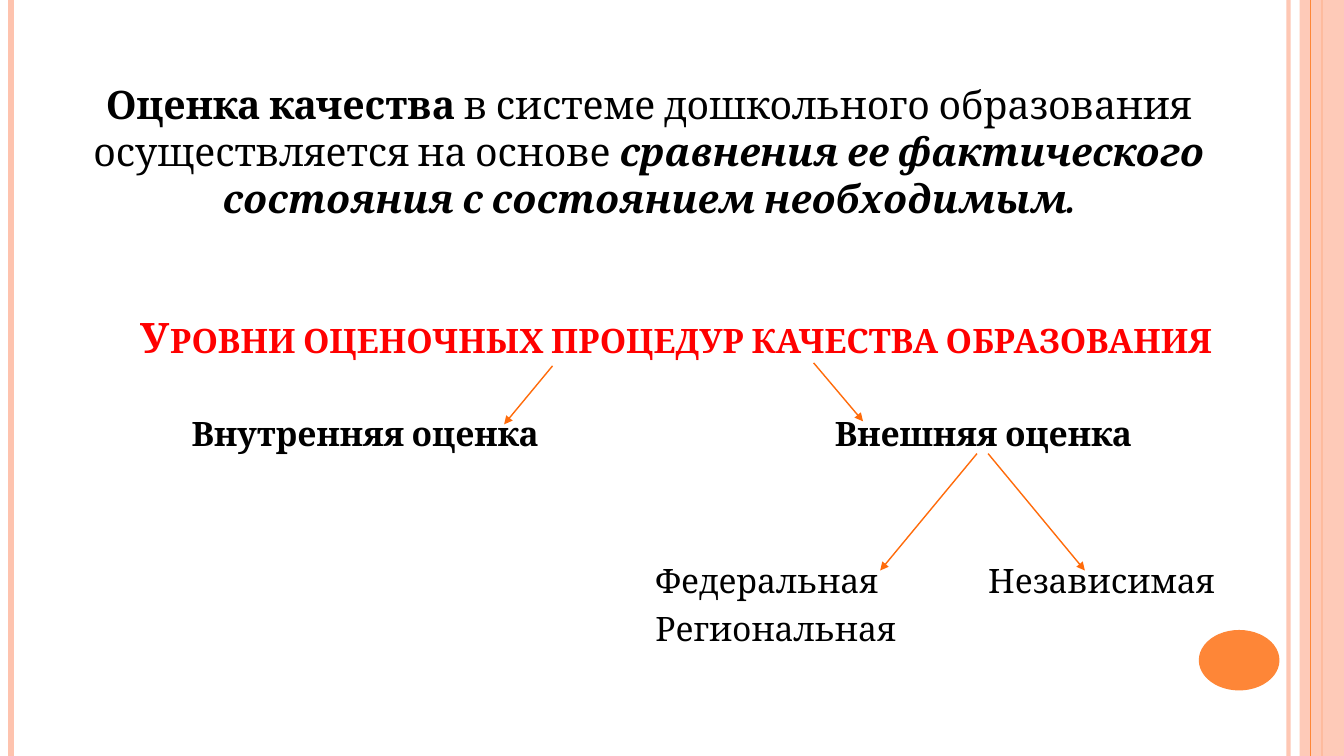
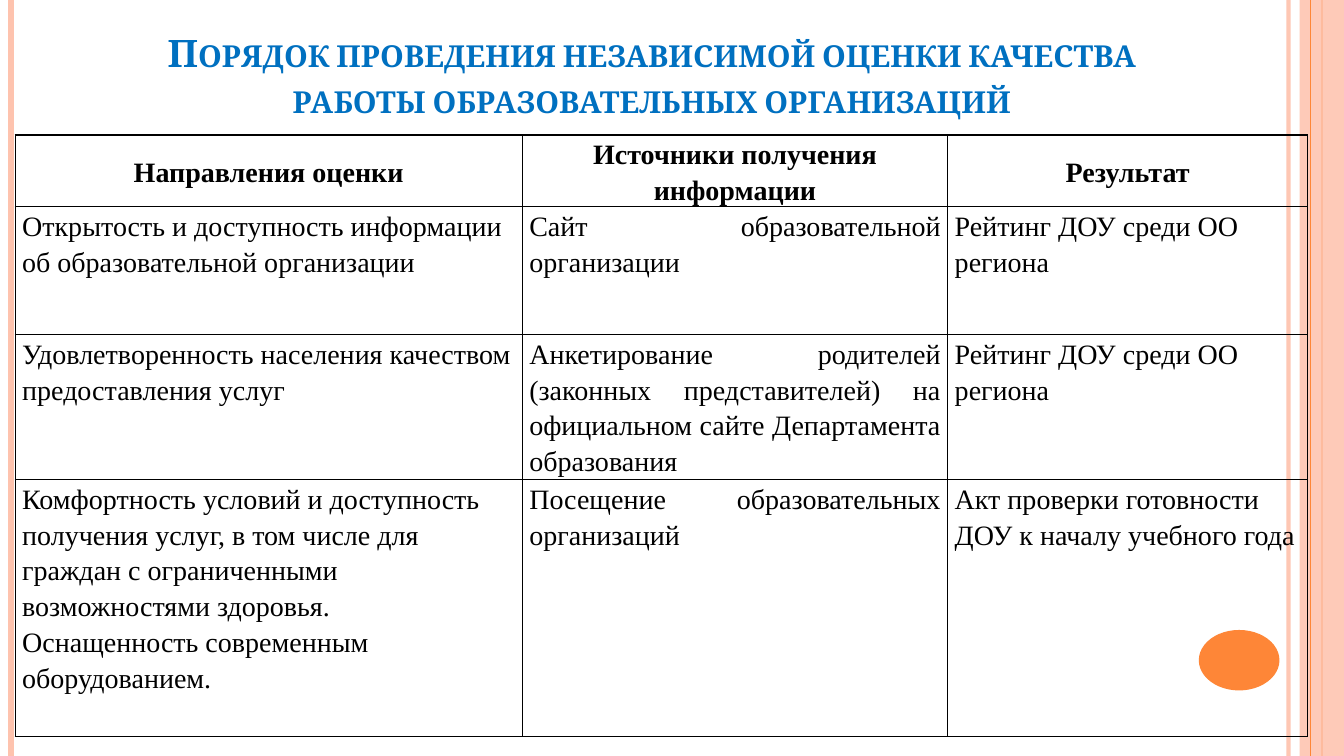
from dataclasses import dataclass
from typing import NamedTuple

from lxml.etree import SubElement
from pptx import Presentation
from pptx.dml.color import RGBColor
from pptx.enum.shapes import MSO_CONNECTOR, MSO_SHAPE
from pptx.enum.text import MSO_ANCHOR, MSO_AUTO_SIZE, PP_ALIGN
from pptx.oxml.ns import qn
from pptx.util import Inches, Pt


@dataclass(frozen=True)
class Theme:
    heading_font: str = "Cambria"
    table_font: str = "Times New Roman"
    black: RGBColor = RGBColor(0x00, 0x00, 0x00)
    red: RGBColor = RGBColor(0xFF, 0x00, 0x00)
    blue: RGBColor = RGBColor(0x00, 0x70, 0xC0)
    peach: RGBColor = RGBColor(0xFE, 0xC3, 0xAE)
    orange: RGBColor = RGBColor(0xFE, 0x86, 0x37)
    arrow: RGBColor = RGBColor(0xFF, 0x6B, 0x0A)
    levels_title_size: int = 30
    procedure_title_size: int = 27
    statement_size: int = 28
    body_size: int = 24
    table_size: int = 20


THEME = Theme()
SLIDE_WIDTH, SLIDE_HEIGHT = 13.33, 7.5


class Box(NamedTuple):
    left: float
    top: float
    width: float
    height: float

    def lengths(self) -> list:
        return [Inches(value) for value in self]


class Stripe(NamedTuple):
    x: float
    color: RGBColor
    weight: float
    opacity: int = 100


class Arrow(NamedTuple):
    x1: float
    y1: float
    x2: float
    y2: float


class Level(NamedTuple):
    placeholder: int
    entries: tuple
    box: Box
    bold: bool = False


class Phrase(NamedTuple):
    text: str
    bold: bool = False
    italic: bool = False


class Column(NamedTuple):
    heading: str
    width: float
    align: PP_ALIGN
    entries: tuple


STRIPES_BEHIND = (
    Stripe(12.78, THEME.peach, 3, 93),
    Stripe(0.11, THEME.peach, 4.5),
    Stripe(13.11, THEME.orange, 1.5),
)
STRIPE_IN_FRONT = Stripe(13, THEME.orange, 0.75)
BAND = Box(12.89, 0, 0.44, SLIDE_HEIGHT)
OVAL = Box(11.89, 6.25, 0.8, 0.6)

STATEMENT = (
    Phrase("Оценка качества ", bold=True),
    Phrase("в системе дошкольного образования осуществляется на основе "),
    Phrase("сравнения ее фактического состояния с состоянием необходимым.",
           bold=True, italic=True),
)
KIND_TOP, SUBKIND_TOP = 4.05, 5.5
LEVELS = (
    Level(1, ("Внутренняя оценка",), Box(1.8, KIND_TOP, 3.8, 0.6), bold=True),
    Level(3, ("Внешняя оценка",), Box(8.18, KIND_TOP, 3.4, 0.6), bold=True),
    Level(2, ("Федеральная", "Региональная"), Box(6.4, SUBKIND_TOP, 3, 1.1)),
    Level(4, ("Независимая",), Box(9.7, SUBKIND_TOP, 2.8, 0.6)),
)
ARROWS = (
    Arrow(9.69, 4.5, 8.73, 5.66),
    Arrow(9.8, 4.5, 10.76, 5.66),
    Arrow(5.48, 3.63, 5, 4.21),
    Arrow(8.07, 3.6, 8.56, 4.18),
)
RATING = "Рейтинг ДОУ среди ОО региона"
COLUMNS = (
    Column("Направления оценки", 5.03, PP_ALIGN.LEFT, (
        "Открытость и доступность информации об образовательной организации",
        "Удовлетворенность населения качеством предоставления услуг",
        "Комфортность условий и доступность получения услуг, в том числе для "
        "граждан с ограниченными возможностями здоровья.\n"
        "Оснащенность современным оборудованием.",
    )),
    Column("Источники получения информации", 4.22, PP_ALIGN.JUSTIFY, (
        "Сайт образовательной организации",
        "Анкетирование родителей (законных представителей) на официальном "
        "сайте Департамента образования",
        "Посещение образовательных организаций",
    )),
    Column("Результат", 3.57, PP_ALIGN.LEFT, (
        RATING,
        RATING,
        "Акт проверки готовности ДОУ к началу учебного года",
    )),
)
ROW_HEIGHTS = (0.71, 1.27, 1.44, 2.55)


def style_font(font, name: str, size: float, color: RGBColor, bold=None) -> None:
    font.name = name
    font.size = Pt(size)
    font.color.rgb = color
    font.bold = bold


def place(shape, box: Box) -> None:
    shape.left, shape.top, shape.width, shape.height = box.lengths()


def set_opacity(shape, percent: int) -> None:
    color = next(shape._element.iter(qn("a:srgbClr")))
    SubElement(color, qn("a:alpha"), val=str(percent * 1000))


def add_line(slide, start: tuple, end: tuple, color: RGBColor, weight: float):
    line = slide.shapes.add_connector(
        MSO_CONNECTOR.STRAIGHT, *(Inches(value) for value in (*start, *end)))
    line.line.color.rgb = color
    line.line.width = Pt(weight)
    SubElement(line._element.spPr, qn("a:effectLst"))
    return line


def add_stripe(slide, stripe: Stripe) -> None:
    line = add_line(slide, (stripe.x, 0), (stripe.x, SLIDE_HEIGHT),
                    stripe.color, stripe.weight)
    if stripe.opacity < 100:
        set_opacity(line, stripe.opacity)


def add_arrow(slide, arrow: Arrow) -> None:
    line = add_line(slide, arrow[:2], arrow[2:], THEME.arrow, 1)
    SubElement(line.line._get_or_add_ln(), qn("a:tailEnd"), type="triangle")


def add_solid(slide, preset: MSO_SHAPE, box: Box, color: RGBColor):
    solid = slide.shapes.add_shape(preset, *box.lengths())
    solid.shadow.inherit = False
    solid.fill.solid()
    solid.fill.fore_color.rgb = color
    solid.line.fill.background()
    return solid


def add_frame(slide) -> None:
    """Draw the side stripes, band and oval that every slide carries."""
    for stripe in STRIPES_BEHIND:
        add_stripe(slide, stripe)
    set_opacity(add_solid(slide, MSO_SHAPE.RECTANGLE, BAND, THEME.peach), 87)
    add_stripe(slide, STRIPE_IN_FRONT)
    add_solid(slide, MSO_SHAPE.OVAL, OVAL, THEME.orange)


def fill_placeholder(placeholder, text: str, box: Box, anchor: MSO_ANCHOR):
    place(placeholder, box)
    frame = placeholder.text_frame
    frame.auto_size = MSO_AUTO_SIZE.NONE
    frame.vertical_anchor = anchor
    frame.text = text
    return frame.paragraphs


def set_title(slide, text: str, box: Box, size: int, color: RGBColor) -> None:
    paragraph = fill_placeholder(slide.shapes.title, text, box, MSO_ANCHOR.BOTTOM)[0]
    paragraph.alignment = PP_ALIGN.CENTER
    style_font(paragraph.font, THEME.heading_font, size, color, True)
    paragraph.runs[0]._r.get_or_add_rPr().set("cap", "small")


def remove_bullet(paragraph) -> None:
    properties = paragraph._p.get_or_add_pPr()
    properties.set("marL", "0")
    properties.set("indent", "0")
    SubElement(properties, qn("a:buNone"))


def fill_level(slide, level: Level) -> None:
    paragraphs = fill_placeholder(slide.placeholders[level.placeholder],
                                  "\n".join(level.entries), level.box, MSO_ANCHOR.TOP)
    for paragraph in paragraphs:
        paragraph.alignment = PP_ALIGN.LEFT
        paragraph.space_before = Pt(6)
        remove_bullet(paragraph)
        style_font(paragraph.font, THEME.heading_font, THEME.body_size,
                   THEME.black, level.bold)


def add_statement(slide) -> None:
    statement = slide.shapes.add_textbox(*Box(0.81, 0.75, 11.25, 1.51).lengths())
    frame = statement.text_frame
    frame.word_wrap = True
    frame.auto_size = MSO_AUTO_SIZE.SHAPE_TO_FIT_TEXT
    paragraph = frame.paragraphs[0]
    paragraph.alignment = PP_ALIGN.CENTER
    style_font(paragraph.font, THEME.heading_font, THEME.statement_size, THEME.black)
    for phrase in STATEMENT:
        run = paragraph.add_run()
        run.text = phrase.text
        run.font.bold = phrase.bold
        run.font.italic = phrase.italic


def add_borders(cell) -> None:
    properties = cell._tc.get_or_add_tcPr()
    for side in ("lnL", "lnR", "lnT", "lnB"):
        border = SubElement(properties, qn(f"a:{side}"), w=str(Pt(1)))
        fill = SubElement(border, qn("a:solidFill"))
        SubElement(fill, qn("a:srgbClr"), val=str(THEME.black))


def fill_cell(cell, text: str, align: PP_ALIGN, heading: bool) -> None:
    add_borders(cell)
    cell.fill.background()
    cell.margin_left = cell.margin_right = Inches(0.07)
    cell.margin_top = cell.margin_bottom = 0
    cell.vertical_anchor = MSO_ANCHOR.MIDDLE if heading else MSO_ANCHOR.TOP
    cell.text = text
    for paragraph in cell.text_frame.paragraphs:
        paragraph.alignment = PP_ALIGN.CENTER if heading else align
        paragraph.line_spacing = 1.15
        style_font(paragraph.font, THEME.table_font, THEME.table_size,
                   THEME.black, heading)


def add_assessment_table(slide) -> None:
    box = Box(0.15, 1.34, sum(column.width for column in COLUMNS), sum(ROW_HEIGHTS))
    table = slide.shapes.add_table(
        len(ROW_HEIGHTS), len(COLUMNS), *box.lengths()).table
    table.first_row = table.horz_banding = False
    for row, height in zip(table.rows, ROW_HEIGHTS):
        row.height = Inches(height)
    for c, column in enumerate(COLUMNS):
        table.columns[c].width = Inches(column.width)
        for r, text in enumerate((column.heading, *column.entries)):
            fill_cell(table.cell(r, c), text, column.align, heading=r == 0)


def build_levels_slide(deck) -> None:
    slide = deck.slides.add_slide(deck.slide_layouts.get_by_name("Comparison"))
    add_frame(slide)
    set_title(slide, "Уровни оценочных процедур качества образования",
              Box(0.66, 2.84, 12.1, 0.8), THEME.levels_title_size, THEME.red)
    for level in LEVELS:
        fill_level(slide, level)
    for arrow in ARROWS:
        add_arrow(slide, arrow)
    add_statement(slide)


def build_procedure_slide(deck) -> None:
    slide = deck.slides.add_slide(deck.slide_layouts.get_by_name("Title Only"))
    add_frame(slide)
    set_title(slide, "Порядок проведения независимой оценки качества "
              "работы образовательных организаций",
              Box(1.02, 0, 10.89, 1.25), THEME.procedure_title_size, THEME.blue)
    add_assessment_table(slide)


def main() -> None:
    deck = Presentation()
    deck.slide_width, deck.slide_height = Inches(SLIDE_WIDTH), Inches(SLIDE_HEIGHT)
    build_levels_slide(deck)
    build_procedure_slide(deck)
    deck.save("out.pptx")


if __name__ == "__main__":
    main()
